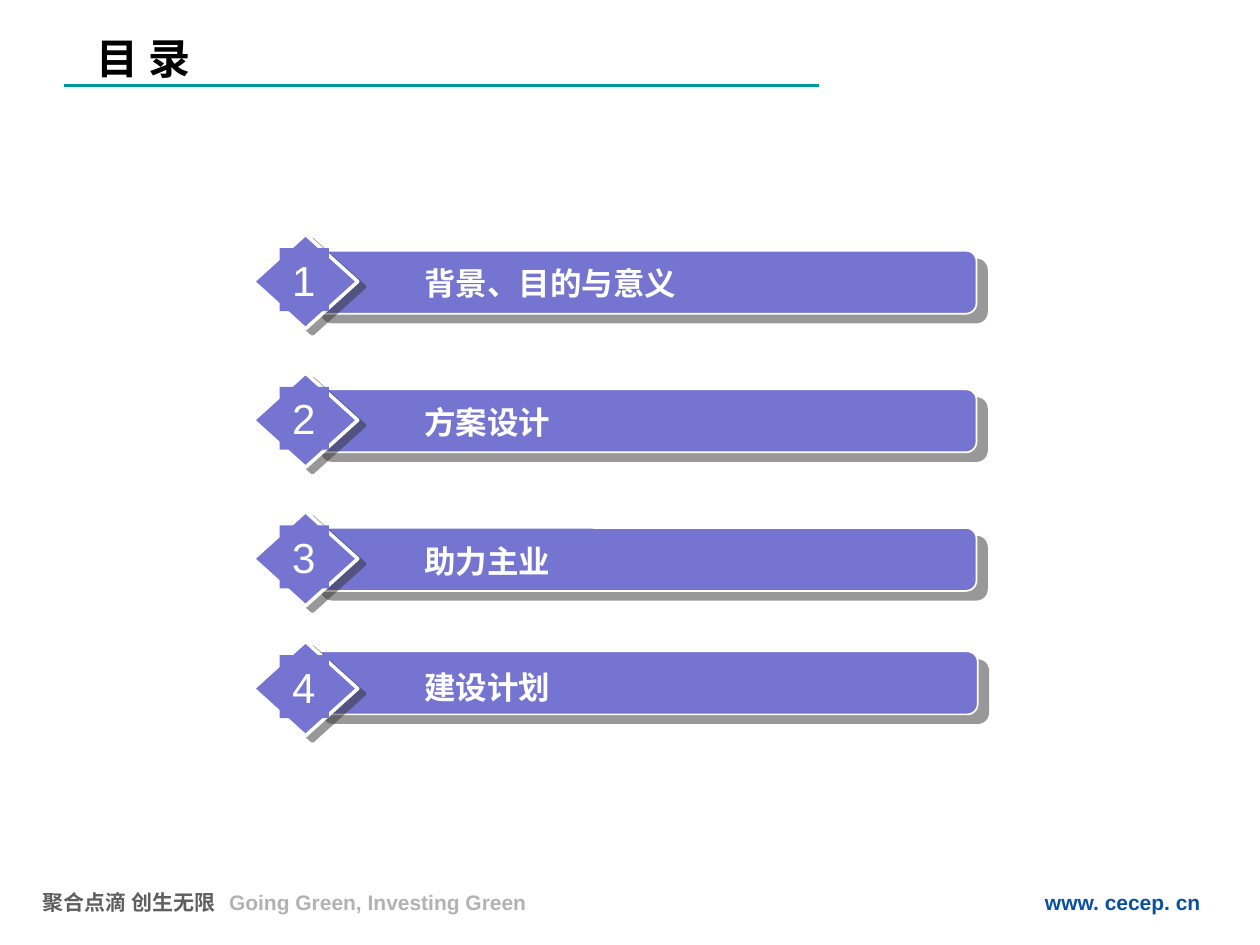
import pptx
import pptx.dml.color
import pptx.enum.shapes
import pptx.enum.text
import pptx.oxml
import pptx.oxml.ns
import pptx.util
from pptx.util import Inches

THEME = {
    "violet": "7575D1", "white": "FFFFFF", "black": "000000", "teal": "009999",
    "shade": "333333", "slate": "5F5F5F", "silver": "B2B2B2", "blue": "0A50A1",
    "latin": "Arial", "chinese": "Noto Sans CJK SC",
    "heading": 24, "number": 24, "topic": 18, "footer": 12,
}

HEADING = "目 录"
TOPICS = [
    {"number": "1", "topic": "背景、目的与意义", "top": 1.86, "bar": (2.47, 0.13), "label": (0.19, 3.65), "font": "latin"},
    {"number": "2", "topic": "方案设计", "top": 2.96, "bar": (2.47, 0.13), "label": (0.19, 3.65), "font": "latin"},
    {"number": "3", "topic": "助力主业", "top": 4.06, "bar": (2.47, 0.13), "label": (0.19, 3.65), "font": "latin"},
    {"number": "4", "topic": "建设计划", "top": 5.09, "bar": (2.48, 0.08), "label": (0.16, 4.09), "font": "chinese"},
]
FOOTER = [("聚合点滴 创生无限", "slate"), ("\tGoing Green, Investing Green", "silver"), ("\twww. cecep. cn", "blue")]
FOOTER_TABS = [(1.48, "l"), (9.19, "r")]


def color(name):
    return pptx.dml.color.RGBColor.from_string(THEME[name])


def add_run(paragraph, text, size, ink, bold=False, font="latin"):
    run = paragraph.add_run()
    run.text = text
    run.font.size = pptx.util.Pt(THEME[size])
    run.font.name = THEME[font]
    run.font.bold = bold
    run.font.color.rgb = color(ink)


def add_box(shapes, left, top, width, height, fill=None, wrap=True):
    box = shapes.add_textbox(Inches(left), Inches(top), Inches(width), Inches(height))
    box.text_frame.word_wrap = wrap
    box.text_frame.auto_size = pptx.enum.text.MSO_AUTO_SIZE.SHAPE_TO_FIT_TEXT
    if fill:
        box.fill.solid()
        box.fill.fore_color.rgb = color(fill)
    return box.text_frame.paragraphs[0]


def add_plate(shapes, kind, left, top, width, height, line, distance, angle):
    plate = shapes.add_shape(kind, Inches(left), Inches(top), Inches(width), Inches(height))
    plate.fill.solid()
    plate.fill.fore_color.rgb = color("violet")
    plate.line.color.rgb = color("white")
    plate.line.width = pptx.util.Pt(line)
    plate.shadow.inherit = False
    effects = plate._element.spPr.find(pptx.oxml.ns.qn("a:effectLst"))
    effects.append(pptx.oxml.parse_xml(
        f'<a:outerShdw {pptx.oxml.ns.nsdecls("a")} blurRad="0" dist="{pptx.util.Pt(distance)}" '
        f'dir="{angle * 60000}" algn="ctr" rotWithShape="0">'
        f'<a:srgbClr val="{THEME["shade"]}"><a:alpha val="50000"/></a:srgbClr></a:outerShdw>'))


def add_topic(slide, entry):
    kinds = pptx.enum.shapes.MSO_SHAPE
    shapes = slide.shapes.add_group_shape().shapes
    top = entry["top"]
    bar_left, bar_drop = entry["bar"]
    label_drop, label_width = entry["label"]
    add_plate(shapes, kinds.ROUNDED_RECTANGLE, bar_left, top + bar_drop, 5.28, 0.5, 1, 7.8, 40)
    add_plate(shapes, kinds.DIAMOND, 2.01, top, 0.83, 0.75, 2, 5, 37)
    topic = add_box(shapes, 3.27, top + label_drop, label_width, 0.4, "violet")
    add_run(topic, entry["topic"], "topic", "white", True, entry["font"])
    number = add_box(shapes, 2.22, top + 0.11, 0.39, 0.5, "violet", wrap=False)
    add_run(number, entry["number"], "number", "white")


def add_footer(slide):
    footer = add_box(slide.shapes, 0.24, 7.01, 9.5, 0.3)
    tabs = pptx.oxml.parse_xml(f'<a:tabLst {pptx.oxml.ns.nsdecls("a")}/>')
    for position, side in FOOTER_TABS:
        tabs.append(pptx.oxml.parse_xml(
            f'<a:tab {pptx.oxml.ns.nsdecls("a")} pos="{Inches(position)}" algn="{side}"/>'))
    footer._p.get_or_add_pPr().append(tabs)
    for text, ink in FOOTER:
        add_run(footer, text, "footer", ink, True)


def add_heading(slide):
    rule = slide.shapes.add_connector(
        pptx.enum.shapes.MSO_CONNECTOR.STRAIGHT, Inches(6.5), Inches(0.68), Inches(0.51), Inches(0.68))
    rule.line.color.rgb = color("teal")
    rule.line.width = pptx.util.Pt(2)
    rule._element.spPr.append(pptx.oxml.parse_xml(f'<a:effectLst {pptx.oxml.ns.nsdecls("a")}/>'))
    add_run(add_box(slide.shapes, 0.67, 0.21, 3.62, 0.5), HEADING, "heading", "black", True)


def main():
    deck = pptx.Presentation()
    deck.slide_width, deck.slide_height = Inches(10), Inches(7.5)
    slide = deck.slides.add_slide(deck.slide_layouts[6])
    add_footer(slide)
    add_heading(slide)
    for entry in TOPICS:
        add_topic(slide, entry)
    deck.save("out.pptx")


if __name__ == "__main__":
    main()
